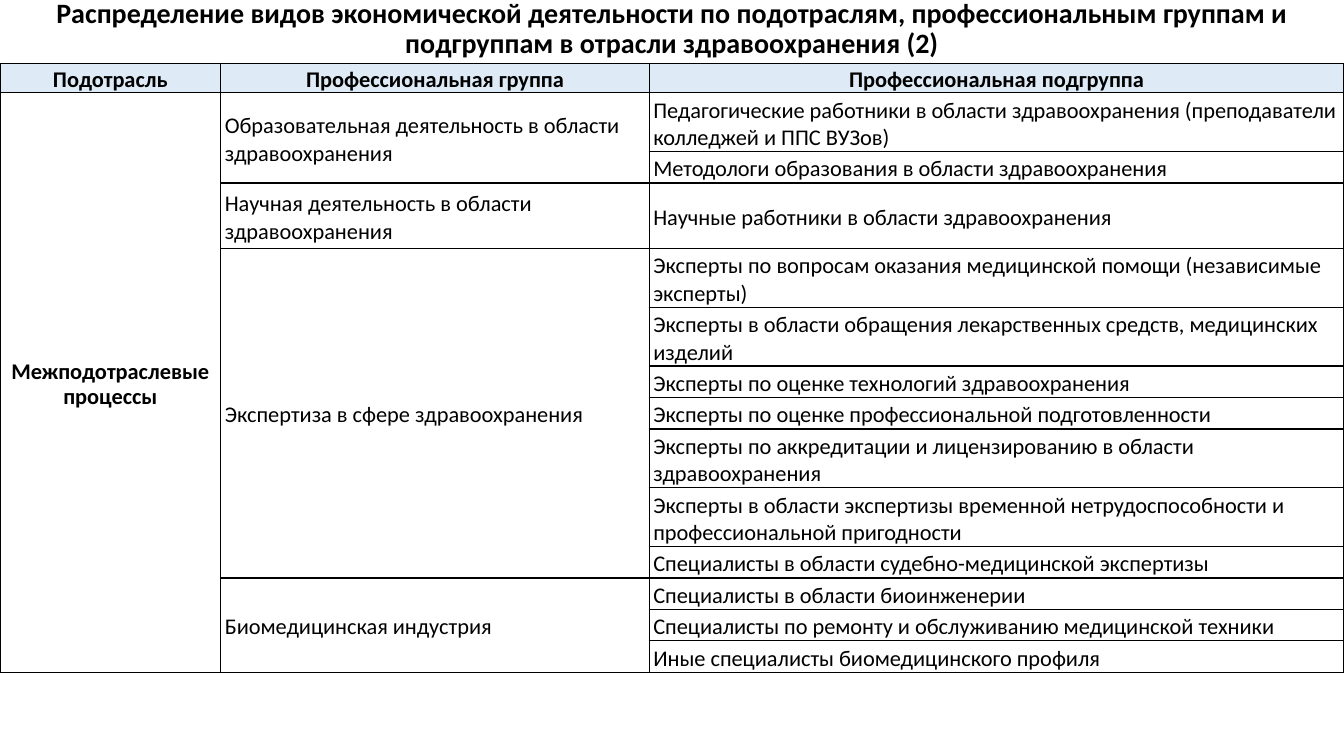
from lxml import etree
from pptx import Presentation
from pptx import util as u
from pptx.dml.color import RGBColor
from pptx.enum import text
from pptx.oxml import ns

FONT = "Calibri"
COLORS = {"ink": "000000", "header": "DEEBF7"}
TITLE = ("Распределение видов экономической деятельности по подотраслям, "
         "профессиональным группам и подгруппам в отрасли здравоохранения (2)")
HEADERS = ["Подотрасль", "Профессиональная группа", "Профессиональная подгруппа"]
SUBSECTOR = "Межподотраслевые процессы"
COLUMN_WIDTHS = [2.19, 4.25, 6.89]
HEADER_HEIGHT, ONE_LINE, TWO_LINES, SCIENCE_HEIGHT = 0.29, 0.31, 0.58, 0.65

# Each group lists its subgroups with their row heights
GROUPS = [
    ("Образовательная деятельность в области здравоохранения", [
        ("Педагогические работники в области здравоохранения "
         "(преподаватели колледжей и ППС ВУЗов)", TWO_LINES),
        ("Методологи образования в области здравоохранения", ONE_LINE),
    ]),
    ("Научная деятельность в области здравоохранения", [
        ("Научные работники в области здравоохранения", SCIENCE_HEIGHT),
    ]),
    ("Экспертиза в сфере здравоохранения", [
        ("Эксперты по вопросам оказания медицинской помощи (независимые эксперты)", TWO_LINES),
        ("Эксперты в области обращения лекарственных средств, медицинских изделий", TWO_LINES),
        ("Эксперты по оценке технологий здравоохранения", ONE_LINE),
        ("Эксперты по оценке профессиональной подготовленности", ONE_LINE),
        ("Эксперты по аккредитации и лицензированию в области здравоохранения", TWO_LINES),
        ("Эксперты в области экспертизы временной нетрудоспособности "
         "и профессиональной пригодности", TWO_LINES),
        ("Специалисты в области судебно-медицинской экспертизы", ONE_LINE),
    ]),
    ("Биомедицинская индустрия", [
        ("Специалисты в области биоинженерии", ONE_LINE),
        ("Специалисты по ремонту и обслуживанию медицинской техники", ONE_LINE),
        ("Иные специалисты биомедицинского профиля", ONE_LINE),
    ]),
]


def add_run(paragraph, wording, size, bold):
    run = paragraph.add_run()
    run.text = wording
    run.font.name = FONT
    run.font.size = u.Pt(size)
    run.font.bold = bold
    run.font.color.rgb = RGBColor.from_string(COLORS["ink"])


def write_cell(cell, wording, heading=False):
    paragraph = cell.text_frame.paragraphs[0]
    paragraph.alignment = text.PP_ALIGN.CENTER if heading else text.PP_ALIGN.LEFT
    paragraph.line_spacing = 0.9 if heading else 1.0
    add_run(paragraph, wording, 16, heading)


def format_cell(cell, is_header):
    cell.margin_left = cell.margin_right = cell.margin_top = u.Inches(0.04)
    cell.margin_bottom = 0
    cell.vertical_anchor = text.MSO_ANCHOR.MIDDLE
    properties = cell._tc.get_or_add_tcPr()
    # Borders come before the fill in the cell properties
    for side in ("a:lnL", "a:lnR", "a:lnT", "a:lnB"):
        line = etree.SubElement(properties, ns.qn(side), w=str(u.Pt(1)))
        fill = etree.SubElement(line, ns.qn("a:solidFill"))
        etree.SubElement(fill, ns.qn("a:srgbClr"), val=COLORS["ink"])
    if is_header:
        cell.fill.solid()
        cell.fill.fore_color.rgb = RGBColor.from_string(COLORS["header"])
    else:
        cell.fill.background()


def place_title(slide, left, top, width, height):
    title = slide.shapes.title
    title.left, title.top = u.Inches(left), u.Inches(top)
    title.width, title.height = u.Inches(width), u.Inches(height)
    frame = title.text_frame
    frame.margin_left = frame.margin_right = frame.margin_top = frame.margin_bottom = 0
    frame.word_wrap = True
    frame.auto_size = text.MSO_AUTO_SIZE.NONE
    frame.vertical_anchor = text.MSO_ANCHOR.MIDDLE
    paragraph = frame.paragraphs[0]
    paragraph.alignment = text.PP_ALIGN.CENTER
    paragraph.line_spacing = 0.9
    add_run(paragraph, TITLE, 20, True)


def place_table(slide, left, top, width):
    heights = [HEADER_HEIGHT] + [height for _, subgroups in GROUPS for _, height in subgroups]
    table = slide.shapes.add_table(
        len(heights), len(HEADERS), u.Inches(left), u.Inches(top),
        u.Inches(width), u.Inches(sum(heights))).table
    table.first_row = table.horz_banding = False
    for column, share in zip(table.columns, COLUMN_WIDTHS):
        column.width = u.Inches(width * share / sum(COLUMN_WIDTHS))
    for index, (row, height) in enumerate(zip(table.rows, heights)):
        row.height = u.Inches(height)
        for cell in row.cells:
            format_cell(cell, index == 0)

    # Header and subsector
    for column, heading in enumerate(HEADERS):
        write_cell(table.cell(0, column), heading, heading=True)
    table.cell(1, 0).merge(table.cell(len(heights) - 1, 0))
    write_cell(table.cell(1, 0), SUBSECTOR, heading=True)

    # Groups span the rows of their subgroups
    first = 1
    for group, subgroups in GROUPS:
        last = first + len(subgroups) - 1
        if last > first:
            table.cell(first, 1).merge(table.cell(last, 1))
        write_cell(table.cell(first, 1), group)
        for row, (subgroup, _) in enumerate(subgroups, first):
            write_cell(table.cell(row, 2), subgroup)
        first = last + 1


def main():
    presentation = Presentation()
    presentation.slide_width = u.Inches(13.33)
    presentation.slide_height = u.Inches(7.5)
    slide = presentation.slides.add_slide(presentation.slide_layouts[5])
    place_title(slide, 0, 0, 13.33, 0.59)
    place_table(slide, 0, 0.63, 13.33)
    presentation.save("out.pptx")


if __name__ == "__main__":
    main()
